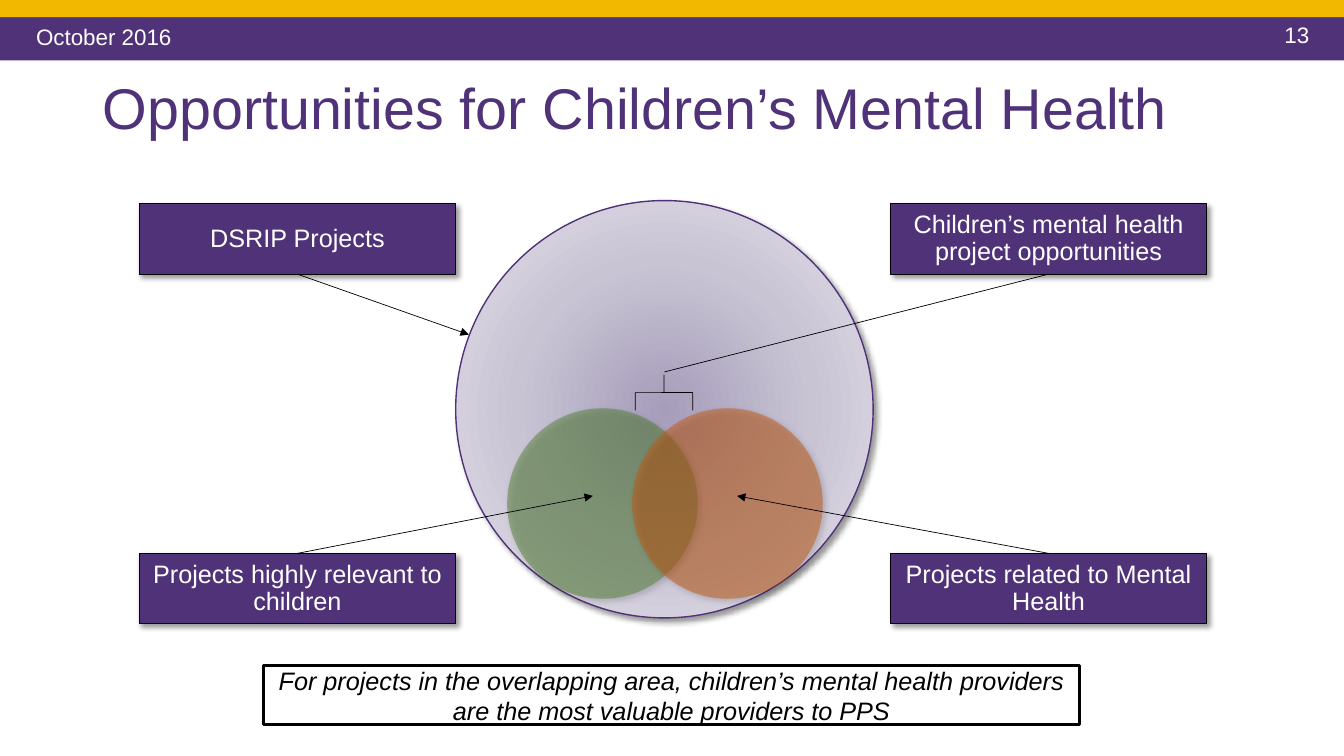
"""Build the slide on opportunities for children's mental health projects."""
from lxml import etree
from pptx import Presentation
from pptx.dml.color import RGBColor
from pptx.enum.shapes import MSO_CONNECTOR, MSO_SHAPE
from pptx.enum.text import MSO_ANCHOR, PP_ALIGN
from pptx.oxml import parse_xml
from pptx.oxml.ns import nsdecls, qn
from pptx.util import Inches, Pt

COLORS = {
    "purple": "503278",
    "gold": "F2B800",
    "green": "548235",
    "orange": "C55A11",
    "black": "000000",
    "white": "FFFFFF",
    "center": "A69DBB",
    "middle": "C9C4D4",
    "edge": "E5E2EA",
}


def add_figure(preset, box, fill=None, line=None, width=0.75, shadow=None):
    """Add a preset shape; shadow is opacity, blur, distance and angle."""
    shape = slide.shapes.add_shape(preset, *[Inches(length) for length in box])
    shape.shadow.inherit = False
    if fill:
        shape.fill.solid()
        shape.fill.fore_color.rgb = RGBColor.from_string(COLORS[fill])
    else:
        shape.fill.background()
    if line:
        shape.line.color.rgb = RGBColor.from_string(COLORS[line])
        shape.line.width = Pt(width)
    else:
        shape.line.fill.background()
    if shadow:
        opacity, blur, distance, angle = shadow
        shape._element.spPr.find(qn("a:effectLst")).append(parse_xml(
            f'<a:outerShdw {nsdecls("a")} blurRad="{int(Pt(blur))}" dist="{int(Pt(distance))}" '
            f'dir="{angle * 60000}" algn="tl" rotWithShape="0"><a:srgbClr val="{COLORS["black"]}">'
            f'<a:alpha val="{opacity * 1000}"/></a:srgbClr></a:outerShdw>'))
    return shape


def write_text(shape, text, size, color, align=PP_ALIGN.LEFT, anchor=MSO_ANCHOR.MIDDLE, wrap=True):
    """Fill a shape with one formatted paragraph and return the paragraph."""
    text_frame = shape.text_frame
    text_frame.text = text
    text_frame.word_wrap = wrap
    text_frame.vertical_anchor = anchor
    paragraph = text_frame.paragraphs[0]
    paragraph.alignment = align
    font = paragraph.runs[0].font
    font.name = "Arial"
    font.size = Pt(size)
    font.color.rgb = RGBColor.from_string(COLORS[color])
    return paragraph


presentation = Presentation()
presentation.slide_width = Inches(13.33)
presentation.slide_height = Inches(7.5)
slide = presentation.slides.add_slide(presentation.slide_layouts[6])

add_figure(MSO_SHAPE.RECTANGLE, (0, 0.17, 13.33, 0.43), "purple")
add_figure(MSO_SHAPE.RECTANGLE, (0, 0, 13.33, 0.17), "gold")

page_number = slide.shapes.add_textbox(Inches(12.64), Inches(0.16), Inches(0.48), Inches(0.37))
write_text(page_number, "13", 16, "white", anchor=MSO_ANCHOR.TOP, wrap=False)

date = slide.shapes.add_textbox(Inches(0.26), Inches(0.16), Inches(6), Inches(0.4))
write_text(date, "October 2016", 16, "white")
date.text_frame.margin_top = date.text_frame.margin_bottom = 0

title = slide.shapes.add_textbox(Inches(0.92), Inches(0.72), Inches(12.22), Inches(0.76))
write_text(title, "Opportunities for Children’s Mental Health", 41, "purple").line_spacing = 0.9

BOX_SHADOW = (40, 4, 3, 45)
all_projects = add_figure(MSO_SHAPE.OVAL, (4.52, 1.99, 4.14, 4.14), "center", "purple", 1, BOX_SHADOW)
stops = "".join(
    f'<a:gs pos="{position * 1000}"><a:srgbClr val="{COLORS[name]}"/></a:gs>'
    for position, name in ((0, "center"), (50, "middle"), (100, "edge")))
properties = all_projects._element.spPr
properties.replace(properties.find(qn("a:solidFill")), parse_xml(
    f'<a:gradFill {nsdecls("a")} rotWithShape="1"><a:gsLst>{stops}</a:gsLst><a:path path="circle">'
    '<a:fillToRect l="50000" t="50000" r="50000" b="50000"/></a:path></a:gradFill>'))

for left, color in ((5.03, "green"), (6.27, "orange")):
    circle = add_figure(MSO_SHAPE.OVAL, (left, 4.05, 1.89, 1.89), color, shadow=(30, 4.5, 2.6, 53))
    fill_color = circle._element.spPr.find(qn("a:solidFill")).find(qn("a:srgbClr"))
    etree.SubElement(fill_color, qn("a:alpha")).set("val", "50000")

LEFT, RIGHT, TOP, BOTTOM = 1.38, 8.83, 2.02, 5.49
LABEL_WIDTH, LABEL_HEIGHT = 3.14, 0.7
labels = [
    (LEFT, BOTTOM, "Projects highly relevant to children", (5.88, 4.92), True),
    (RIGHT, BOTTOM, "Projects related to Mental Health", (7.31, 4.92), True),
    (LEFT, TOP, "DSRIP Projects", (4.65, 3.32), True),
    (RIGHT, TOP, "Children’s mental health project opportunities", (6.59, 3.69), False),
]
for left, top, text, (end_x, end_y), has_arrow in labels:
    label = add_figure(MSO_SHAPE.RECTANGLE, (left, top, LABEL_WIDTH, LABEL_HEIGHT),
                       "purple", "black", shadow=BOX_SHADOW)
    write_text(label, text, 18, "white", PP_ALIGN.CENTER).line_spacing = 0.9

    start_y = top if top == BOTTOM else top + LABEL_HEIGHT
    connector = slide.shapes.add_connector(
        MSO_CONNECTOR.STRAIGHT, Inches(left + LABEL_WIDTH / 2), Inches(start_y),
        Inches(end_x), Inches(end_y))
    connector.line.color.rgb = RGBColor.from_string(COLORS["black"])
    connector.line.width = Pt(0.5)
    if has_arrow:
        etree.SubElement(connector.line._get_or_add_ln(), qn("a:tailEnd")).set("type", "triangle")
    etree.SubElement(connector._element.spPr, qn("a:effectLst"))

brace = add_figure(MSO_SHAPE.LEFT_BRACE, (6.41, 3.61, 0.35, 0.57), line="black", width=0.5)
brace.adjustments[0] = 0
brace.adjustments[1] = 0.5
brace.rotation = 90

conclusion = add_figure(MSO_SHAPE.RECTANGLE, (2.61, 6.6, 8.1, 0.59), line="black", width=2.25)
paragraph = write_text(
    conclusion,
    "For projects in the overlapping area, children’s mental health providers "
    "are the most valuable providers to PPS",
    18, "black", PP_ALIGN.CENTER)
paragraph.runs[0].font.italic = True

presentation.save("out.pptx")
